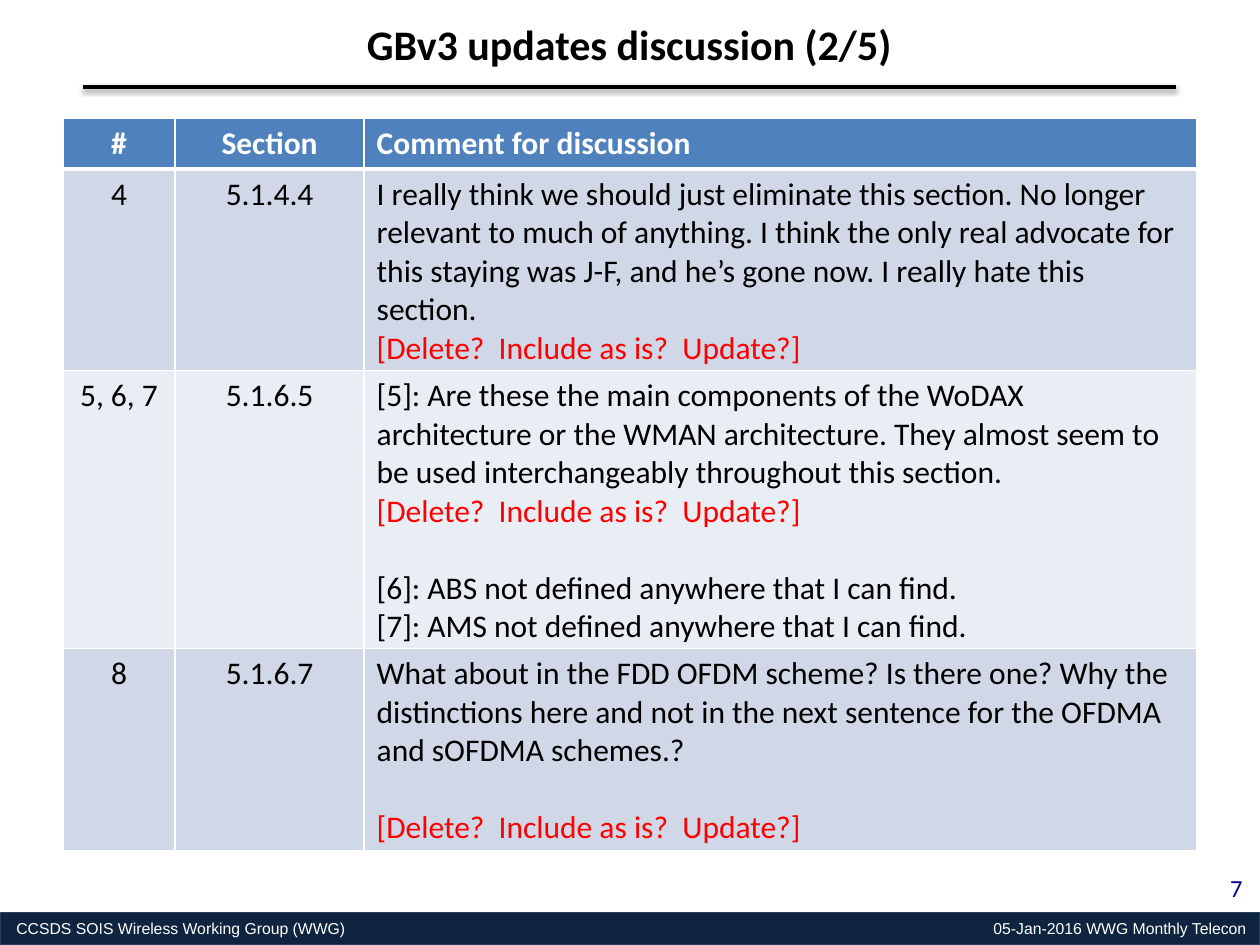
from lxml.etree import SubElement
from pptx import Presentation
from pptx.dml.color import RGBColor
from pptx.enum.shapes import MSO_CONNECTOR, MSO_SHAPE
from pptx.enum.text import MSO_ANCHOR, PP_ALIGN
from pptx.oxml import parse_xml
from pptx.oxml.ns import nsdecls, qn
from pptx.util import Inches, Pt

BLACK = RGBColor(0x00, 0x00, 0x00)
WHITE = RGBColor(0xFF, 0xFF, 0xFF)
RED = RGBColor(0xFF, 0x00, 0x00)
NAVY = RGBColor(0x0F, 0x24, 0x3E)
EDGE = RGBColor(0x25, 0x40, 0x61)
INDIGO = RGBColor(0x00, 0x00, 0x90)
BLUE = RGBColor(0x4F, 0x81, 0xBD)
BANDS = [RGBColor(0xD0, 0xD8, 0xE8), RGBColor(0xE9, 0xED, 0xF4)]

LINE_GAP = 22  # points, one line of 18 point text
ASK = "[Delete?  Include as is?  Update?]"
HEADS = ["#", "Section", "Comment for discussion"]
# Each comment is a list of (text, colour, space before in points).
ROWS = [
    ("4", "5.1.4.4", [
        ("I really think we should just eliminate this section. No longer "
         "relevant to much of anything. I think the only real advocate for "
         "this staying was J-F, and he’s gone now. I really hate this "
         "section.", BLACK, 0),
        (ASK, RED, 0)]),
    ("5, 6, 7", "5.1.6.5", [
        ("[5]: Are these the main components of the WoDAX architecture or "
         "the WMAN architecture. They almost seem to be used "
         "interchangeably throughout this section.", BLACK, 0),
        (ASK, RED, 0),
        ("[6]: ABS not defined anywhere that I can find.", BLACK, LINE_GAP),
        ("[7]: AMS not defined anywhere that I can find.", BLACK, 0)]),
    ("8", "5.1.6.7", [
        ("What about in the FDD OFDM scheme? Is there one? Why the "
         "distinctions here and not in the next sentence for the OFDMA and "
         "sOFDMA schemes.?", BLACK, 0),
        (ASK, RED, LINE_GAP)]),
]


def write(par, text, size=18, font="Calibri", color=BLACK, bold=False,
          align=PP_ALIGN.LEFT, before=0):
    par.alignment = align
    par.space_before = Pt(before)
    run = par.add_run()
    run.text = text
    run.font.size = Pt(size)
    run.font.name = font
    run.font.color.rgb = color
    run.font.bold = bold


def add_label(slide, box, text, wrap=True, **style):
    frame = slide.shapes.add_textbox(*map(Inches, box)).text_frame
    frame.word_wrap = wrap
    write(frame.paragraphs[0], text, **style)
    return frame


def add_title(slide, left, top, width, height):
    """Place the heading with its shadowed rule below."""
    add_label(slide, (left, top, width, height),
              "GBv3 updates discussion (2/5)", wrap=False, size=24, bold=True,
              align=PP_ALIGN.CENTER)
    rule_y = Inches(top + 0.59)
    rule = slide.shapes.add_connector(
        MSO_CONNECTOR.STRAIGHT, Inches(left), rule_y,
        Inches(left + width), rule_y)
    rule.line.color.rgb = BLACK
    rule.line.width = Pt(2)
    rule._element.spPr.append(parse_xml(
        f'<a:effectLst {nsdecls("a")}>'
        f'<a:outerShdw blurRad="{Pt(3.1)}" dist="{Pt(1.6)}" dir="5400000" '
        'rotWithShape="0"><a:srgbClr val="000000"><a:alpha val="38000"/>'
        '</a:srgbClr></a:outerShdw></a:effectLst>'))


def style_cell(cell, color, under):
    """Fill the cell and draw white borders, the bottom one `under` wide."""
    cell.fill.solid()
    cell.fill.fore_color.rgb = color
    props = cell._tc.get_or_add_tcPr()
    for spot, (side, width) in enumerate(
            [("L", 1), ("R", 1), ("T", 1), ("B", under)]):
        line = parse_xml(f'<a:ln{side} {nsdecls("a")} w="{Pt(width)}"/>')
        fill = SubElement(line, qn("a:solidFill"))
        SubElement(fill, qn("a:srgbClr"), val=str(WHITE))
        props.insert(spot, line)


def add_comments(slide, left, top, width, height):
    frame = slide.shapes.add_table(
        len(ROWS) + 1, len(HEADS),
        *map(Inches, (left, top, width, height)))
    table = frame.table
    for col, size in zip(table.columns, [0.89, 1.5, width - 2.39]):
        col.width = Inches(size)
    for row, size in zip(table.rows, [0.4, 1.6, 2.2, height - 4.2]):
        row.height = Inches(size)

    heads = [[(text, WHITE, 0)] for text in HEADS]
    body = [[[(num, BLACK, 0)], [(section, BLACK, 0)], notes]
            for num, section, notes in ROWS]
    for r, cells in enumerate([heads] + body):
        head = r == 0
        for c, parts in enumerate(cells):
            cell = table.cell(r, c)
            style_cell(cell, BLUE if head else BANDS[(r - 1) % 2],
                       3 if head else 1)
            for i, (text, color, before) in enumerate(parts):
                text_frame = cell.text_frame
                par = (text_frame.add_paragraph() if i
                       else text_frame.paragraphs[0])
                write(par, text, color=color, bold=head, before=before,
                      align=PP_ALIGN.LEFT if c == 2 else PP_ALIGN.CENTER)


def add_footer(slide, left, top, width, height):
    """Place the dark bar, its two labels and the page number above."""
    bar = slide.shapes.add_shape(
        MSO_SHAPE.RECTANGLE, *map(Inches, (left, top, width, height)))
    bar.shadow.inherit = False
    bar.fill.solid()
    bar.fill.fore_color.rgb = NAVY
    bar.line.color.rgb = EDGE
    bar.line.width = Pt(0.75)
    for text, align in [
            ("CCSDS SOIS Wireless Working Group (WWG)", PP_ALIGN.LEFT),
            ("05-Jan-2016 WWG Monthly Telecon", PP_ALIGN.RIGHT)]:
        frame = add_label(slide, (left, top, width, height), text, size=9,
                          font="Arial", color=WHITE, align=align)
        frame.vertical_anchor = MSO_ANCHOR.MIDDLE
        frame.margin_left = Inches(0.13)
        frame.margin_right = Inches(0.11)
    add_label(slide, (left + width - 0.7, top - 0.36, 0.66, 0.35), "7",
              size=14, color=INDIGO, align=PP_ALIGN.RIGHT)


def main():
    deck = Presentation()
    deck.slide_width = Inches(10)
    deck.slide_height = Inches(7.5)
    slide = deck.slides.add_slide(deck.slide_layouts[6])
    add_footer(slide, 0, 7.24, 10, 0.26)
    add_comments(slide, 0.5, 0.94, 9, 5.8)
    add_title(slide, 0.66, 0.1, 8.67, 0.5)
    deck.save("out.pptx")


if __name__ == "__main__":
    main()
